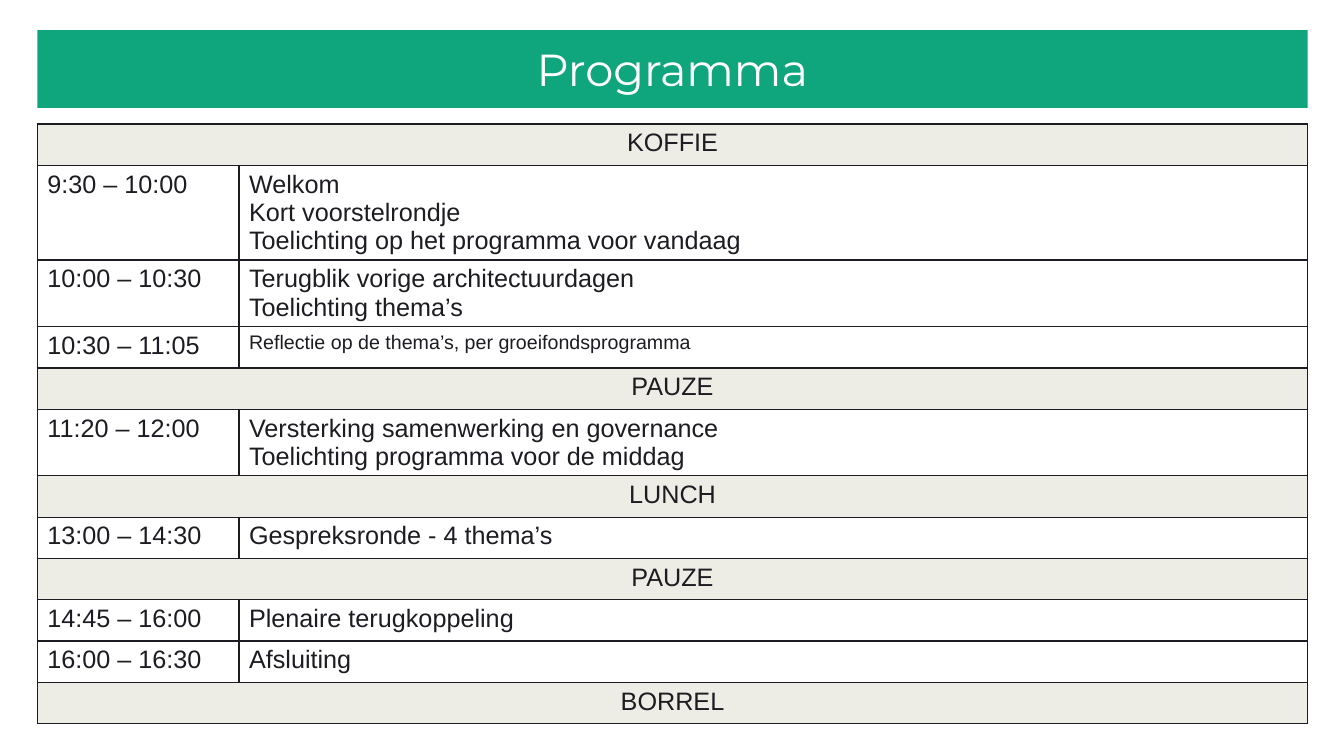
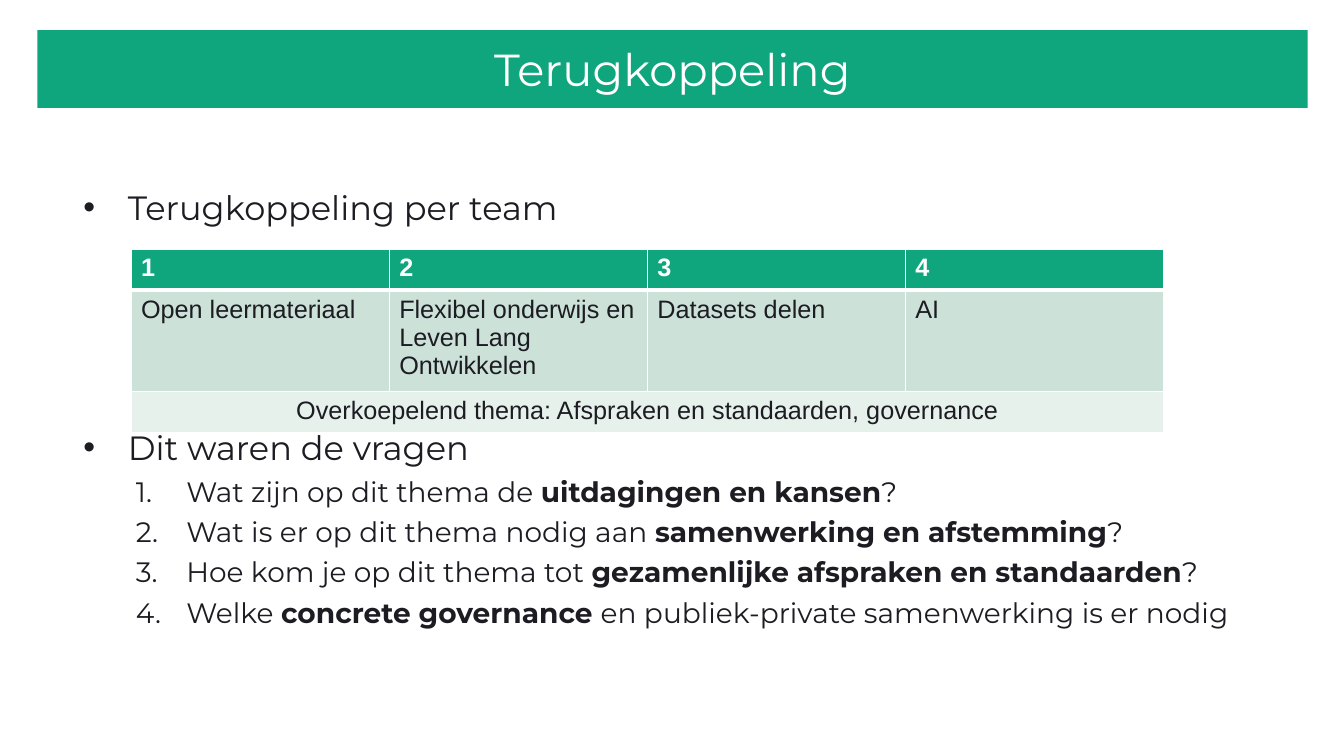
from lxml.etree import SubElement
from pptx import Presentation
from pptx.dml.color import RGBColor
from pptx.enum.shapes import MSO_SHAPE
from pptx.enum.text import MSO_ANCHOR, PP_ALIGN
from pptx.oxml.ns import qn
from pptx.util import Inches, Pt

GREEN, DARK, WHITE = "0FA67E", "1C1C22", "FFFFFF"
SAND, MINT, PALE_MINT = "EDEDE5", "CCE1D8", "E7F1EC"
HEADING_FONT, TABLE_FONT = "Montserrat", "Arial"
TITLE_BOX = (0.37, 0.3, 12.6, 0.77)

PROGRAMME = [
    ("", ["KOFFIE"]),
    ("9:30 – 10:00", ["Welkom", "Kort voorstelrondje", "Toelichting op het programma voor vandaag"]),
    ("10:00 – 10:30", ["Terugblik vorige architectuurdagen", "Toelichting thema’s"]),
    ("10:30 – 11:05", ["Reflectie op de thema’s, per groeifondsprogramma"]),
    ("", ["PAUZE"]),
    ("11:20 – 12:00", ["Versterking samenwerking en governance", "Toelichting programma voor de middag"]),
    ("", ["LUNCH"]),
    ("13:00 – 14:30", ["Gespreksronde - 4 thema’s"]),
    ("", ["PAUZE"]),
    ("14:45 – 16:00", ["Plenaire terugkoppeling"]),
    ("16:00 – 16:30", ["Afsluiting"]),
    ("", ["BORREL"]),
]
SMALL_ROW = 3

THEMES = [
    "Open leermateriaal",
    "Flexibel onderwijs en Leven Lang Ontwikkelen",
    "Datasets delen",
    "AI",
]
SHARED_THEME = "Overkoepelend thema: Afspraken en standaarden, governance"

QUESTIONS = [
    ("Wat zijn op dit thema de ", "uitdagingen en kansen", "?"),
    ("Wat is er op dit thema nodig aan ", "samenwerking en afstemming", "?"),
    ("Hoe kom je op dit thema tot ", "gezamenlijke afspraken en standaarden", "?"),
    ("Welke ", "concrete governance ", "en publiek-private samenwerking is er nodig"),
]


def paint(color_format, value):
    color_format.rgb = RGBColor.from_string(value)


def fill_with(target, value):
    target.fill.solid()
    paint(target.fill.fore_color, value)


def add_text(paragraph, text, size=18, font=TABLE_FONT, color=DARK, bold=False, align=None):
    if align is not None:
        paragraph.alignment = align
    run = paragraph.add_run()
    run.text = text
    run.font.size = Pt(size)
    run.font.name = font
    run.font.bold = bold
    paint(run.font.color, color)


def next_paragraph(frame, is_first):
    return frame.paragraphs[0] if is_first else frame.add_paragraph()


def set_margins(frame, margin=0.1):
    frame.word_wrap = True
    frame.margin_left = frame.margin_right = Inches(margin)
    frame.margin_top = frame.margin_bottom = Inches(margin)


def add_title(slide, text, box=TITLE_BOX):
    shape = slide.shapes.add_shape(MSO_SHAPE.RECTANGLE, *map(Inches, box))
    shape.shadow.inherit = False
    fill_with(shape, GREEN)
    shape.line.fill.background()
    frame = shape.text_frame
    set_margins(frame)
    frame.vertical_anchor = MSO_ANCHOR.MIDDLE
    add_text(frame.paragraphs[0], text, size=32, font=HEADING_FONT, color=WHITE, align=PP_ALIGN.CENTER)


def set_borders(cell, color, bottom_width=1):
    properties = cell._tc.get_or_add_tcPr()
    for side in ("L", "R", "T", "B"):
        width = bottom_width if side == "B" else 1
        line = SubElement(properties, qn(f"a:ln{side}"), w=str(Pt(width)))
        solid = SubElement(line, qn("a:solidFill"))
        SubElement(solid, qn("a:srgbClr"), val=color)


def fill_cell(cell, lines, fill, border, bottom_width=1, **text_format):
    set_borders(cell, border, bottom_width)
    fill_with(cell, fill)
    for index, text in enumerate(lines):
        add_text(next_paragraph(cell.text_frame, index == 0), text, **text_format)


def add_plain_table(slide, left, top, widths, line_counts):
    heights = [max(0.41, 0.1 + 0.28 * count) for count in line_counts]
    table = slide.shapes.add_table(
        len(heights), len(widths), Inches(left), Inches(top), Inches(sum(widths)), Inches(sum(heights))
    ).table
    table.first_row = table.horz_banding = False
    for column, width in zip(table.columns, widths):
        column.width = Inches(width)
    for row, height in zip(table.rows, heights):
        row.height = Inches(height)
    return table


def add_merged_row(table, row, text, fill, border):
    last = len(table.columns) - 1
    for column in range(1, last + 1):
        fill_cell(table.cell(row, column), [], fill, border)
    first_cell = table.cell(row, 0)
    fill_cell(first_cell, [text], fill, border, align=PP_ALIGN.CENTER)
    first_cell.merge(table.cell(row, last))


def add_programme_table(slide, left, top):
    table = add_plain_table(slide, left, top, [2, 10.6], [len(lines) for _, lines in PROGRAMME])
    for row, (time, lines) in enumerate(PROGRAMME):
        if time:
            fill_cell(table.cell(row, 0), [time], WHITE, DARK)
            size = 14 if row == SMALL_ROW else 18
            fill_cell(table.cell(row, 1), lines, WHITE, DARK, size=size)
        else:
            add_merged_row(table, row, lines[0], SAND, DARK)


def add_theme_table(slide, left, top):
    table = add_plain_table(slide, left, top, [2.56] * len(THEMES), [1, 3, 1])
    for column, theme in enumerate(THEMES):
        fill_cell(table.cell(0, column), [str(column + 1)], GREEN, WHITE, bottom_width=3, color=WHITE, bold=True)
        fill_cell(table.cell(1, column), [theme], MINT, WHITE)
    add_merged_row(table, 2, SHARED_THEME, PALE_MINT, WHITE)


def set_bullet(paragraph, indent, hanging, numbered=False):
    properties = paragraph._p.get_or_add_pPr()
    properties.set("marL", str(Inches(indent)))
    properties.set("indent", str(-Inches(hanging)))
    color = SubElement(properties, qn("a:buClr"))
    SubElement(color, qn("a:srgbClr"), val=DARK)
    SubElement(properties, qn("a:buFont"), typeface=HEADING_FONT if numbered else TABLE_FONT)
    if numbered:
        SubElement(properties, qn("a:buAutoNum"), type="arabicPeriod")
    else:
        SubElement(properties, qn("a:buChar"), char="•")


def add_feedback_text(slide, left, top, width, height):
    frame = slide.shapes.add_textbox(Inches(left), Inches(top), Inches(width), Inches(height)).text_frame
    set_margins(frame)
    for index, heading in enumerate(["Terugkoppeling per team", "Dit waren de vragen"]):
        paragraph = next_paragraph(frame, index == 0)
        set_bullet(paragraph, 0.5, 0.44)
        if index:
            paragraph.space_before = Pt(143)
        add_text(paragraph, heading, size=24, font=HEADING_FONT)
    for question in QUESTIONS:
        paragraph = frame.add_paragraph()
        paragraph.level = 1
        set_bullet(paragraph, 1.08, 0.5, numbered=True)
        paragraph.space_before = Pt(4.8)
        for index, part in enumerate(question):
            add_text(paragraph, part, size=20, font=HEADING_FONT, bold=index == 1)


def add_slide(presentation, title):
    slide = presentation.slides.add_slide(presentation.slide_layouts[6])
    fill_with(slide.background, WHITE)
    add_title(slide, title)
    return slide


def main():
    presentation = Presentation()
    presentation.slide_width, presentation.slide_height = Inches(13.33), Inches(7.5)
    add_programme_table(add_slide(presentation, "Programma"), 0.37, 1.23)
    feedback_slide = add_slide(presentation, "Terugkoppeling")
    add_feedback_text(feedback_slide, 0.67, 1.75, 12, 4.95)
    add_theme_table(feedback_slide, 1.3, 2.47)
    presentation.save("out.pptx")


if __name__ == "__main__":
    main()
